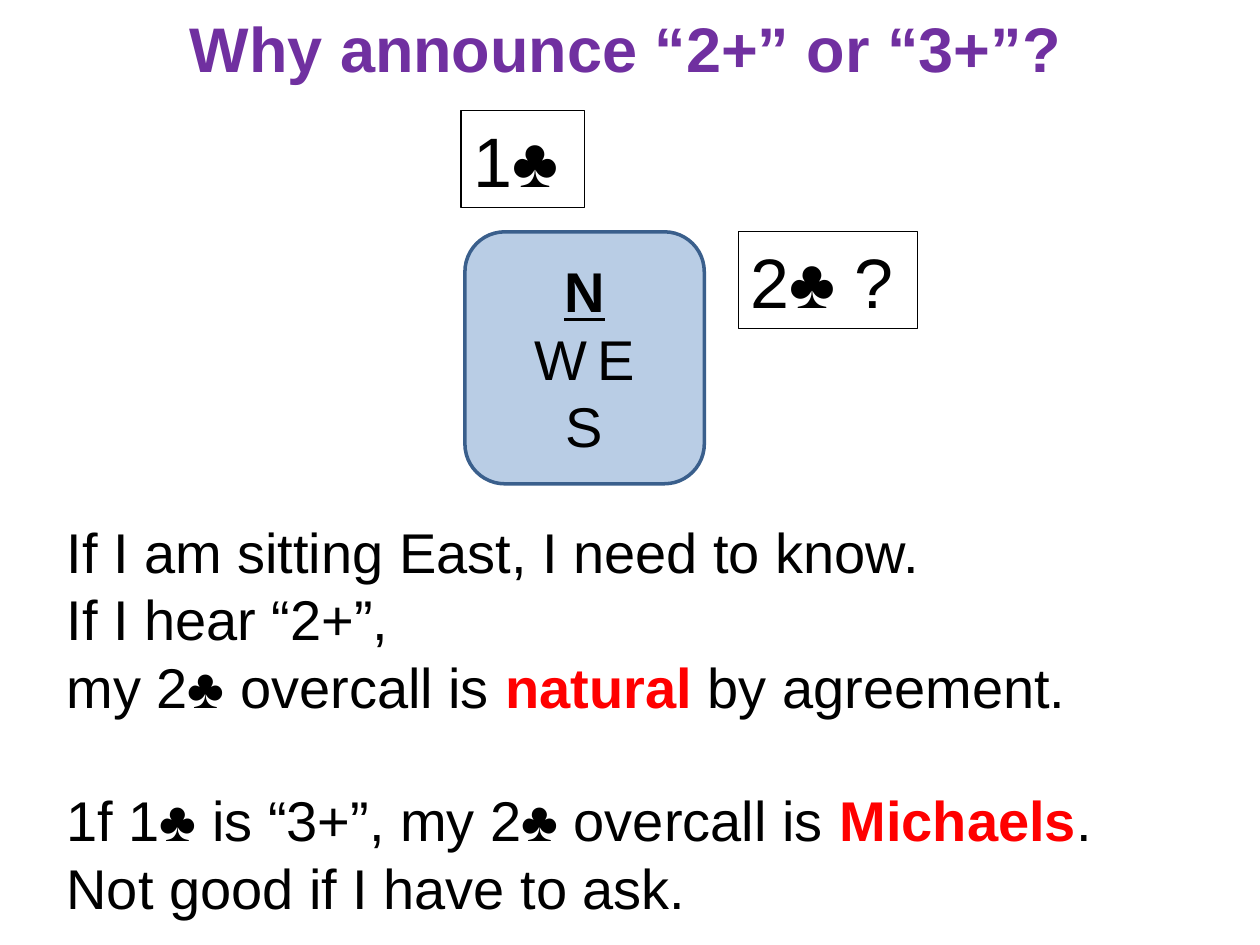
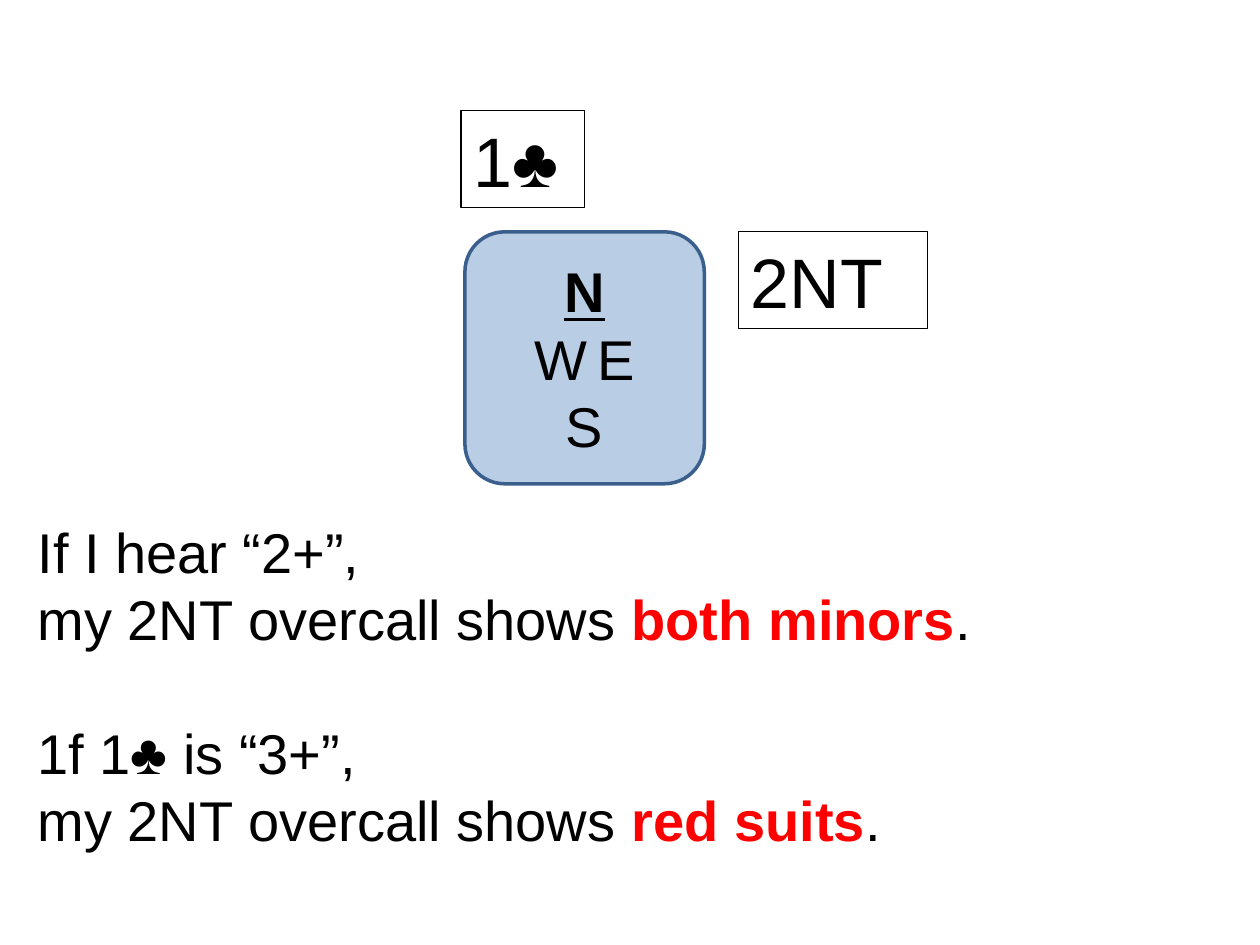
from pptx import Presentation
from pptx.dml.color import RGBColor as RGB
from pptx.enum.shapes import MSO_SHAPE as SHAPE
from pptx.enum.text import MSO_ANCHOR as ANCHOR, PP_ALIGN as ALIGN
from pptx.util import Pt

PX = 9144  # EMU per px, 100 px to the inch
FONT = "Arial"
BLACK = RGB(0x00, 0x00, 0x00)
RED = RGB(0xFF, 0x00, 0x00)
PURPLE = RGB(0x70, 0x30, 0xA0)
PALE = RGB(0xB9, 0xCD, 0xE5)
BLUE = RGB(0x3A, 0x5F, 0x8C)
TEXT, BID, HEAD = 32, 40, 36  # point sizes
GAP = 38  # points between blocks, one text line

TABLE = (369, 184, 190, 200)
NORTH = (366, 88, 98, 77)


def scale(box):
    return [n * PX for n in box]


def style(par, size=TEXT, color=BLACK, bold=False, align=ALIGN.LEFT):
    par.alignment = align
    font = par.font
    font.name, font.size, font.bold = FONT, Pt(size), bold
    font.color.rgb = color


def add_box(slide, kind, box, line, width, fill=None):
    shape = slide.shapes.add_shape(kind, *scale(box))
    shape.shadow.inherit = False
    if fill is None:
        shape.fill.background()
    else:
        shape.fill.solid()
        shape.fill.fore_color.rgb = fill
    shape.line.color.rgb = line
    shape.line.width = Pt(width)
    return shape.text_frame


def add_text(slide, box):
    frame = slide.shapes.add_textbox(*scale(box)).text_frame
    frame.word_wrap = True
    return frame


def next_par(frame, first):
    return frame.paragraphs[0] if first else frame.add_paragraph()


def add_title(slide, text, box):
    par = add_text(slide, box).paragraphs[0]
    par.text = text
    style(par, HEAD, PURPLE, True, ALIGN.CENTER)


def add_table(slide, box):
    """Bridge table with its seats; North, the opener, is marked."""
    frame = add_box(slide, SHAPE.ROUNDED_RECTANGLE, box, BLUE, 2, PALE)
    frame.vertical_anchor = ANCHOR.MIDDLE
    for i, seats in enumerate(("N", "W\tE", "S")):
        par = next_par(frame, i == 0)
        par.text = seats
        opener = seats == "N"
        style(par, bold=opener, align=ALIGN.CENTER)
        par.font.underline = opener


def add_bid(slide, text, box):
    frame = add_box(slide, SHAPE.RECTANGLE, box, BLACK, 0.75)
    frame.vertical_anchor = ANCHOR.TOP
    par = frame.paragraphs[0]
    par.text = text
    style(par, BID)


def add_body(slide, blocks, box):
    """Each line is a tuple of parts; every second part is stressed."""
    frame = add_text(slide, box)
    for b, block in enumerate(blocks):
        for n, line in enumerate(block):
            par = next_par(frame, b == n == 0)
            style(par)
            if b and n == 0:
                par.space_before = Pt(GAP)
            for i, part in enumerate(line):
                run = par.add_run()
                run.text = part
                if i % 2:
                    run.font.bold = True
                    run.font.color.rgb = RED


def add_deal(deck, reply, width, blocks, box, title=None):
    """One slide: the table, North's bid, East's reply and the text."""
    slide = deck.slides.add_slide(deck.slide_layouts[6])
    if title:
        add_title(slide, title, (20, 3, 953, 71))
    add_table(slide, TABLE)
    add_bid(slide, "1♣", NORTH)
    add_bid(slide, reply, (586, TABLE[1], width, NORTH[3]))
    add_body(slide, blocks, box)


def main():
    deck = Presentation()
    deck.slide_width, deck.slide_height = scale((1000, 750))

    # Two clubs: natural or Michaels
    add_deal(deck, "2♣ ?", 142, [
        [("If I am sitting East, I need to know.",),
         ("If I hear “2+”,",),
         ("my 2♣ overcall is ", "natural", " by agreement.")],
        [("1f 1♣ is “3+”, my 2♣ overcall is ", "Michaels", "."),
         ("Not good if I have to ask.",)],
    ], (43, 406, 906, 333), "Why announce “2+” or “3+”?")

    # Two no-trumps: minors or reds
    add_deal(deck, "2NT", 150, [
        [("If I hear “2+”,",),
         ("my 2NT overcall shows ", "both minors", ".")],
        [("1f 1♣ is “3+”,",),
         ("my 2NT overcall shows ", "red suits", ".")],
    ], (20, 406, 977, 279))

    deck.save("out.pptx")


if __name__ == "__main__":
    main()
